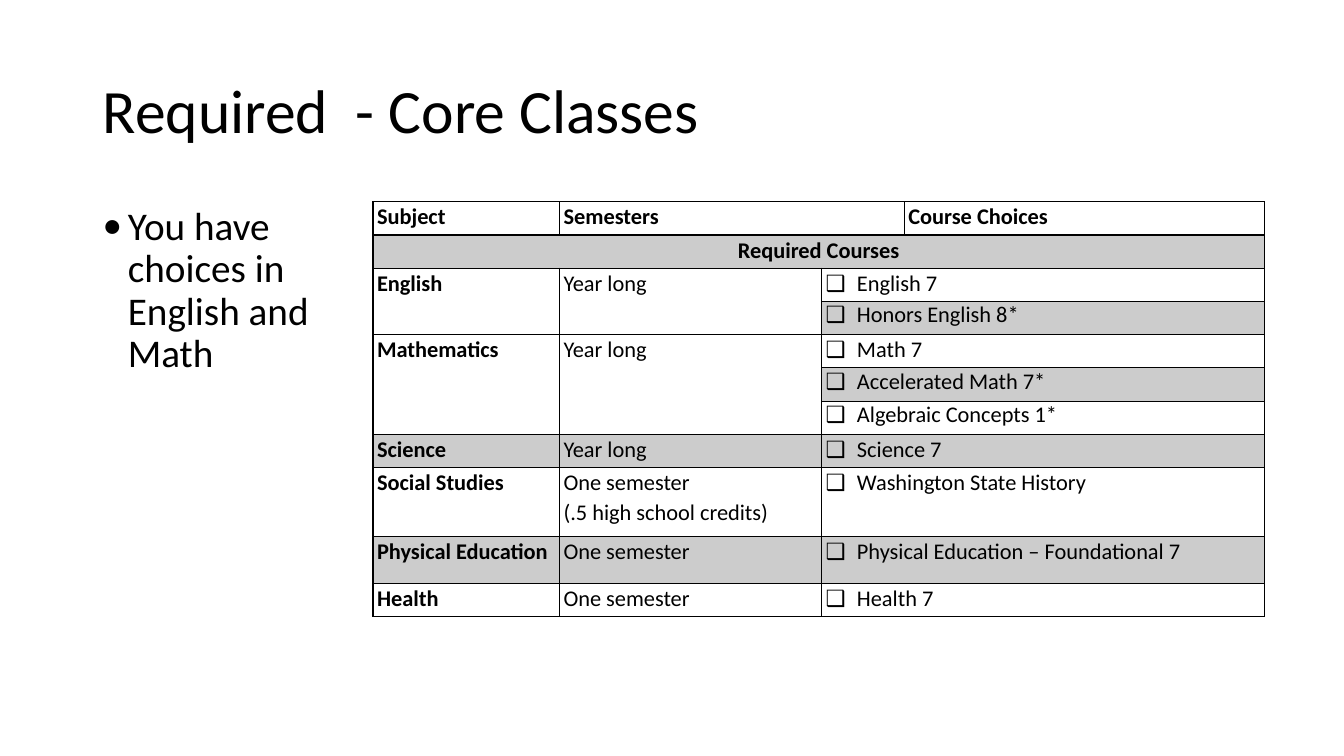
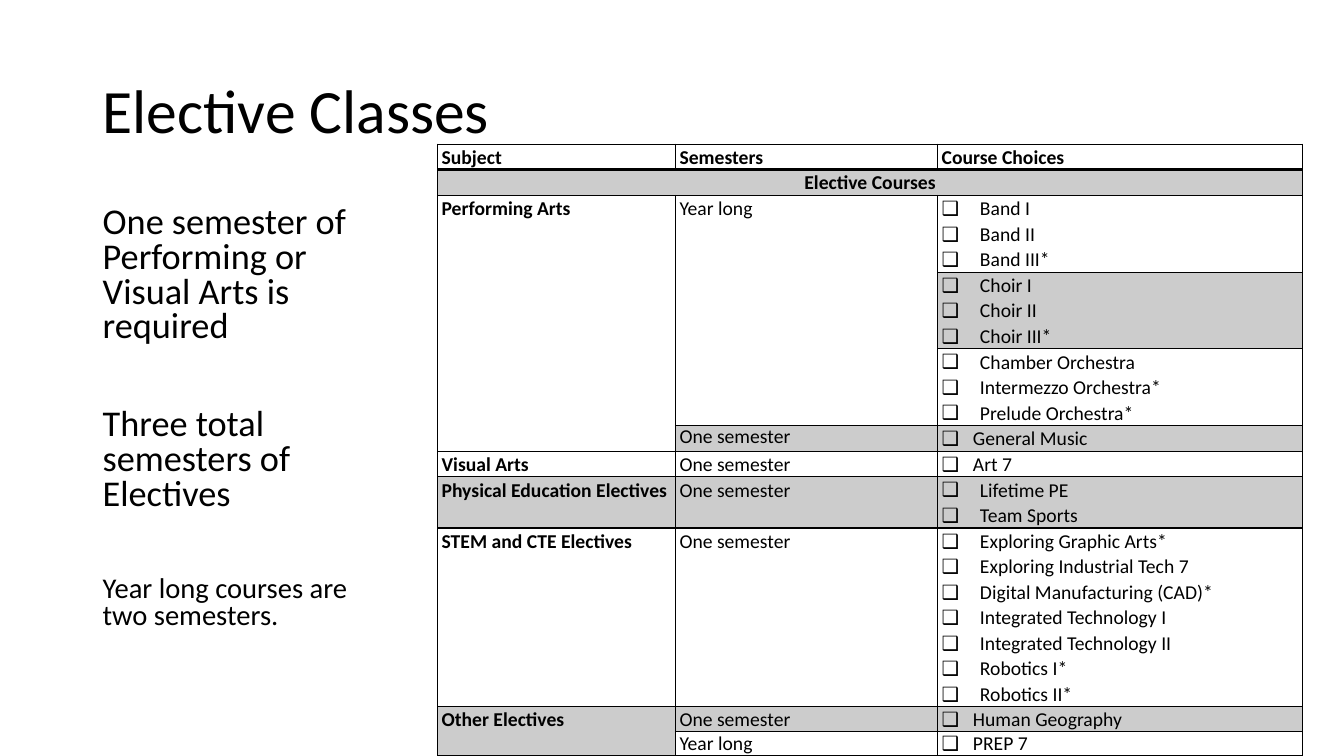
"""Build two slides listing required and elective school courses."""
from dataclasses import dataclass

from lxml.etree import SubElement
from pptx import Presentation
from pptx.dml.color import RGBColor
from pptx.enum.text import MSO_ANCHOR, PP_ALIGN
from pptx.oxml.ns import qn
from pptx.slide import Slide
from pptx.table import _Cell
from pptx.text.text import TextFrame, _Paragraph
from pptx.util import Inches, Pt

BLACK = RGBColor(0x00, 0x00, 0x00)
WHITE = RGBColor(0xFF, 0xFF, 0xFF)
GREY = RGBColor(0xCC, 0xCC, 0xCC)
FONT = "Calibri"
YEAR = ("Year long",)
SEMESTER = ("One semester",)
HEADER_ROW, BAND_ROW = 0, 1
COURSE_COL = 2


@dataclass
class Note:
    text: str
    size: float
    spacing: float = 0.9
    before: float = 10
    bullet: bool = False


@dataclass
class Entry:
    row: int
    col: int
    lines: tuple[str, ...]
    rows: int = 1
    cols: int = 1
    grey: bool = False
    spacing: float = 1.07


@dataclass
class CourseTable:
    left: float
    top: float
    size: float
    widths: tuple[float, ...]
    heights: tuple[float, ...]
    entries: list[Entry]


@dataclass
class Page:
    title: str
    notes: list[Note]
    table: CourseTable


REQUIRED = CourseTable(
    3.7, 2, 16, (1.85, 2.6, 0.82, 3.57), (0.33,) * 8 + (0.68, 0.47, 0.33),
    [
        Entry(0, 0, ("Subject",)),
        Entry(0, 1, ("Semesters",), cols=2),
        Entry(0, 3, ("Course Choices",)),
        Entry(1, 0, ("Required Courses",), cols=4, grey=True),
        Entry(2, 0, ("English",), rows=2),
        Entry(2, 1, YEAR, rows=2),
        Entry(2, 2, ("English 7",), cols=2),
        Entry(3, 2, ("Honors English 8*",), cols=2, grey=True, spacing=1),
        Entry(4, 0, ("Mathematics",), rows=3),
        Entry(4, 1, YEAR, rows=3),
        Entry(4, 2, ("Math 7",), cols=2),
        Entry(5, 2, ("Accelerated Math 7*",), cols=2, grey=True, spacing=1),
        Entry(6, 2, ("Algebraic Concepts 1*",), cols=2, spacing=1),
        Entry(7, 0, ("Science",), grey=True),
        Entry(7, 1, YEAR, grey=True),
        Entry(7, 2, ("Science 7",), cols=2, grey=True),
        Entry(8, 0, ("Social Studies",)),
        Entry(8, 1, ("One semester", "(.5 high school credits)")),
        Entry(8, 2, ("Washington State History",), cols=2),
        Entry(9, 0, ("Physical Education",), grey=True),
        Entry(9, 1, SEMESTER, grey=True),
        Entry(9, 2, ("Physical Education – Foundational 7",), cols=2, grey=True),
        Entry(10, 0, ("Health",)),
        Entry(10, 1, SEMESTER),
        Entry(10, 2, ("Health 7",), cols=2),
    ],
)

ELECTIVE = CourseTable(
    4.34, 1.43, 14, (2.36, 2.6, 3.62),
    (0.25, 0.26, 0.76, 0.76, 0.76, 0.26, 0.25, 0.51, 1.77, 0.25, 0.24),
    [
        Entry(0, 0, ("Subject",)),
        Entry(0, 1, ("Semesters",)),
        Entry(0, 2, ("Course Choices",)),
        Entry(1, 0, ("Elective Courses",), cols=3, grey=True),
        Entry(2, 0, ("Performing Arts",), rows=4),
        Entry(2, 1, YEAR, rows=3),
        Entry(2, 2, ("Band I", "Band II", "Band III*")),
        Entry(3, 2, ("Choir I", "Choir II", "Choir III*"), grey=True),
        Entry(4, 2, ("Chamber Orchestra", "Intermezzo Orchestra*", "Prelude Orchestra*")),
        Entry(5, 1, SEMESTER, grey=True, spacing=1),
        Entry(5, 2, ("General Music",), grey=True),
        Entry(6, 0, ("Visual Arts",)),
        Entry(6, 1, SEMESTER),
        Entry(6, 2, ("Art 7",)),
        Entry(7, 0, ("Physical Education Electives",), grey=True),
        Entry(7, 1, SEMESTER, grey=True),
        Entry(7, 2, ("Lifetime PE", "Team Sports"), grey=True),
        Entry(8, 0, ("STEM and CTE Electives",)),
        Entry(8, 1, SEMESTER),
        Entry(8, 2, ("Exploring Graphic Arts*", "Exploring Industrial Tech 7",
                     "Digital Manufacturing (CAD)*", "Integrated Technology I",
                     "Integrated Technology II", "Robotics I*", "Robotics II*")),
        Entry(9, 0, ("Other Electives",), rows=2, grey=True),
        Entry(9, 1, SEMESTER, grey=True),
        Entry(9, 2, ("Human Geography",), grey=True),
        Entry(10, 1, YEAR, spacing=1),
        Entry(10, 2, ("PREP 7",), spacing=1),
    ],
)

PAGES = [
    Page("Required  - Core Classes",
         [Note("You have choices in English and Math", 28, bullet=True)], REQUIRED),
    Page("Elective Classes",
         [Note("One semester of Performing or Visual Arts is required", 25.9, 0.8),
          Note("Three total semesters of Electives", 25.9, 0.8, 45),
          Note("Year long courses are two semesters.", 20.4, 0.8, 45)], ELECTIVE),
]


def add_text(p: _Paragraph, text: str, size: float, spacing: float, bold: bool = False) -> None:
    p.line_spacing = spacing
    r = p.add_run()
    r.text = text
    r.font.name = FONT
    r.font.size = Pt(size)
    r.font.bold = bold
    r.font.color.rgb = BLACK


def add_bullet(p: _Paragraph, char: str, indent: float) -> None:
    pPr = p._p.get_or_add_pPr()
    pPr.set("marL", str(Inches(indent)))
    pPr.set("indent", str(-Inches(indent)))
    SubElement(pPr, qn("a:buFont"), typeface=FONT)
    SubElement(pPr, qn("a:buChar"), char=char)


def next_paragraph(tf: TextFrame, index: int) -> _Paragraph:
    return tf.add_paragraph() if index else tf.paragraphs[0]


def add_notes(s: Slide, top: float, width: float, height: float, notes: list[Note]) -> TextFrame:
    tf = s.shapes.add_textbox(Inches(0.92), Inches(top), Inches(width), Inches(height)).text_frame
    tf.word_wrap = True
    for i, note in enumerate(notes):
        p = next_paragraph(tf, i)
        add_text(p, note.text, note.size, note.spacing)
        p.space_before = Pt(note.before)
        if note.bullet:
            add_bullet(p, "•", 0.25)
    return tf


def style_cell(cell: _Cell, row: int) -> None:
    cell.margin_left = cell.margin_right = Inches(0.04)
    cell.margin_top = cell.margin_bottom = 0
    heavy = {HEADER_ROW: "lnB", BAND_ROW: "lnT"}.get(row)
    for side in ("lnL", "lnR", "lnT", "lnB"):
        ln = SubElement(cell._tc.get_or_add_tcPr(), qn(f"a:{side}"),
                        w=str(Pt(2 if side == heavy else 1)))
        SubElement(SubElement(ln, qn("a:solidFill")), qn("a:srgbClr"), val=str(BLACK))
    cell.fill.solid()
    cell.fill.fore_color.rgb = WHITE


def fill_cell(cell: _Cell, entry: Entry, size: float) -> None:
    if entry.grey:
        cell.fill.fore_color.rgb = GREY
    heading = entry.row <= BAND_ROW
    for i, line in enumerate(entry.lines):
        p = next_paragraph(cell.text_frame, i)
        add_text(p, line, size, entry.spacing, heading or entry.col == 0)
        if entry.row == BAND_ROW:
            p.alignment = PP_ALIGN.CENTER
        if entry.col == COURSE_COL and not heading:
            add_bullet(p, "❑", 0.38 if len(entry.lines) > 1 else 0.31)


def add_course_table(s: Slide, courses: CourseTable) -> None:
    table = s.shapes.add_table(
        len(courses.heights), len(courses.widths), Inches(courses.left), Inches(courses.top),
        Inches(sum(courses.widths)), Inches(sum(courses.heights))).table
    table.first_row = table.horz_banding = False
    for column, width in zip(table.columns, courses.widths):
        column.width = Inches(width)
    for i, (row, height) in enumerate(zip(table.rows, courses.heights)):
        row.height = Inches(height)
        for cell in row.cells:
            style_cell(cell, i)
    for entry in courses.entries:
        cell = table.cell(entry.row, entry.col)
        if entry.rows > 1 or entry.cols > 1:
            cell.merge(table.cell(entry.row + entry.rows - 1, entry.col + entry.cols - 1))
        fill_cell(cell, entry, courses.size)


def main() -> None:
    prs = Presentation()
    prs.slide_width = Inches(13.33)
    prs.slide_height = Inches(7.5)
    for page in PAGES:
        s = prs.slides.add_slide(prs.slide_layouts[6])
        title = add_notes(s, 0.4, 11.5, 1.45, [Note(page.title, 44, before=0)])
        title.vertical_anchor = MSO_ANCHOR.MIDDLE
        add_notes(s, 2, 2.79, 4.76, page.notes)
        add_course_table(s, page.table)
    prs.save("out.pptx")


if __name__ == "__main__":
    main()
